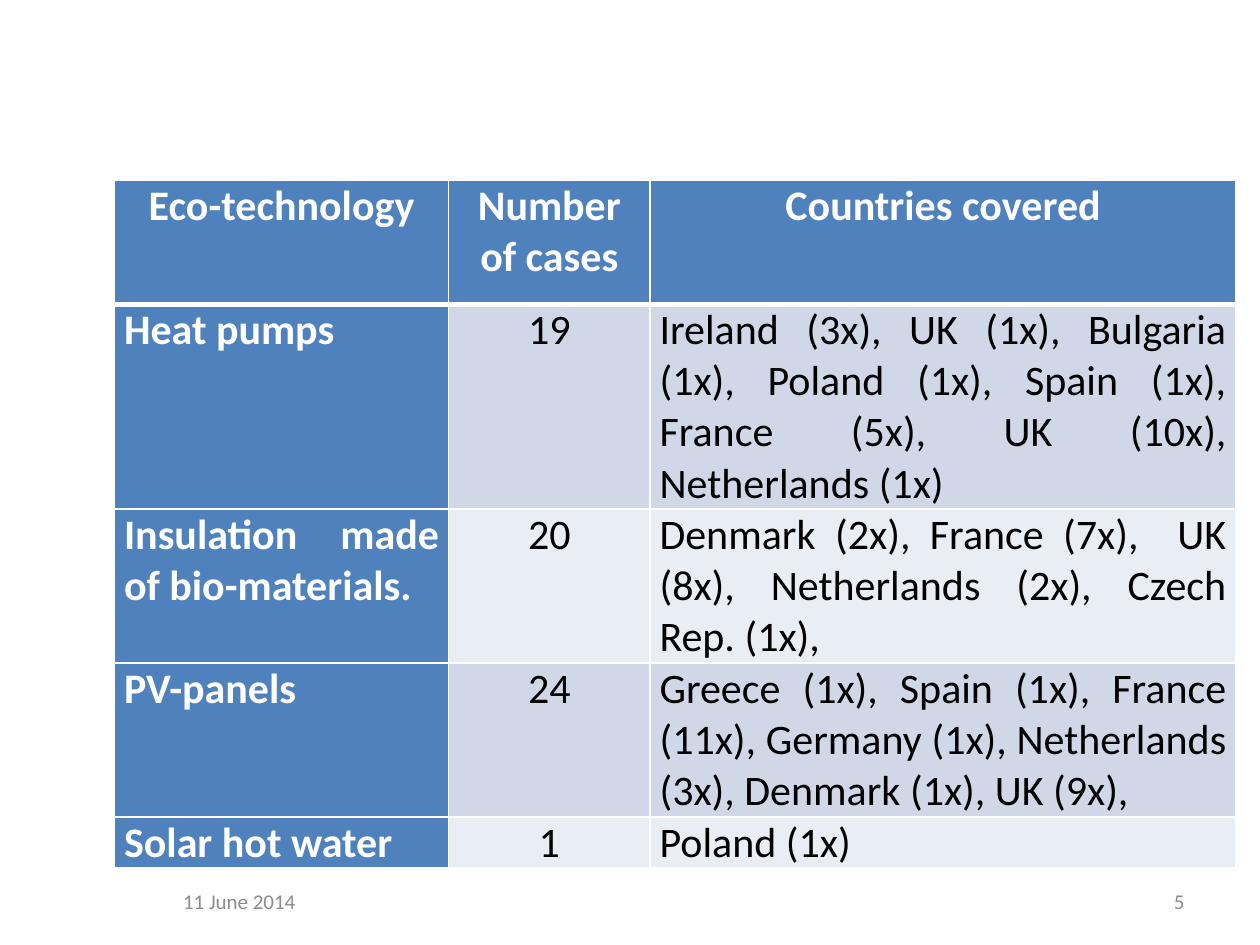
from lxml import etree
from pptx import Presentation
from pptx import util as u
from pptx.dml.color import RGBColor
from pptx.enum import text
from pptx.oxml import ns

HEADERS = ["Eco-technology", "Number of cases", "Countries covered"]
CASES = [
    ("Heat pumps", "19", "Ireland (3x), UK (1x), Bulgaria (1x), Poland (1x), "
     "Spain (1x), France (5x), UK (10x), Netherlands (1x)"),
    ("Insulation made of bio-materials.", "20", "Denmark (2x), France (7x),  UK (8x), "
     "Netherlands (2x), Czech Rep. (1x),"),
    ("PV-panels", "24", "Greece (1x), Spain (1x), France (11x), Germany (1x), "
     "Netherlands (3x), Denmark (1x), UK (9x),"),
    ("Solar hot water", "1", "Poland (1x)"),
]
FOOTERS = [
    ("11 June 2014", 65.5, 142.5, text.PP_ALIGN.CENTER),
    ("5", 516, 168, text.PP_ALIGN.RIGHT),
]
COLUMN_WIDTHS = [190.8, 115.2, 334.8]
ROW_HEIGHTS = [71, 117, 88, 88, 29]
TABLE_LEFT, TABLE_TOP = 65.5, 103
FOOTER_TOP, FOOTER_HEIGHT = 500.4, 28.8
BLUE, BANDS = "4F81BD", ["D0D8E8", "E9EDF4"]
WHITE, BLACK, GREY = "FFFFFF", "000000", "8C8C8C"


def color(value):
    return RGBColor.from_string(value)


def write(frame, content, size=24, fill=BLACK, bold=False, align=text.PP_ALIGN.JUSTIFY):
    frame.word_wrap = True
    paragraph = frame.paragraphs[0]
    paragraph.alignment = align
    run = paragraph.add_run()
    run.text = content
    run.font.name = "Calibri"
    run.font.size = u.Pt(size)
    run.font.bold = bold
    run.font.color.rgb = color(fill)


def set_borders(cell, widths):
    properties = cell._tc.get_or_add_tcPr()
    for index, (side, width) in enumerate(widths.items()):
        line = etree.Element(ns.qn(f"a:ln{side}"), w=str(u.Pt(width)))
        solid = etree.SubElement(line, ns.qn("a:solidFill"))
        etree.SubElement(solid, ns.qn("a:srgbClr"), val=WHITE)
        properties.insert(index, line)


def add_case_table(slide):
    rows = [HEADERS, *CASES]
    table = slide.shapes.add_table(
        len(rows), len(HEADERS), u.Pt(TABLE_LEFT), u.Pt(TABLE_TOP),
        u.Pt(sum(COLUMN_WIDTHS)), u.Pt(sum(ROW_HEIGHTS))).table
    for column, width in zip(table.columns, COLUMN_WIDTHS):
        column.width = u.Pt(width)
    for row, height in zip(table.rows, ROW_HEIGHTS):
        row.height = u.Pt(height)
    for r, values in enumerate(rows):
        for c, value in enumerate(values):
            cell = table.cell(r, c)
            heading = r == 0 or c == 0
            centred = r == 0 or c == 1
            cell.margin_left = cell.margin_right = u.Pt(5.4)
            cell.margin_top = cell.margin_bottom = 0
            cell.fill.solid()
            cell.fill.fore_color.rgb = color(BLUE if heading else BANDS[(r - 1) % 2])
            set_borders(cell, {"L": 1, "R": 1, "T": 3 if r == 1 else 1, "B": 3 if r == 0 else 1})
            write(cell.text_frame, value, fill=WHITE if heading else BLACK, bold=heading,
                  align=text.PP_ALIGN.CENTER if centred else text.PP_ALIGN.JUSTIFY)


def add_footers(slide):
    for content, left, width, align in FOOTERS:
        frame = slide.shapes.add_textbox(
            u.Pt(left), u.Pt(FOOTER_TOP), u.Pt(width), u.Pt(FOOTER_HEIGHT)).text_frame
        frame.vertical_anchor = text.MSO_ANCHOR.MIDDLE
        write(frame, content, size=12, fill=GREY, align=align)


def main():
    presentation = Presentation()
    presentation.slide_width, presentation.slide_height = u.Pt(720), u.Pt(540)
    slide = presentation.slides.add_slide(presentation.slide_layouts[6])
    add_footers(slide)
    add_case_table(slide)
    presentation.save("out.pptx")


if __name__ == "__main__":
    main()
